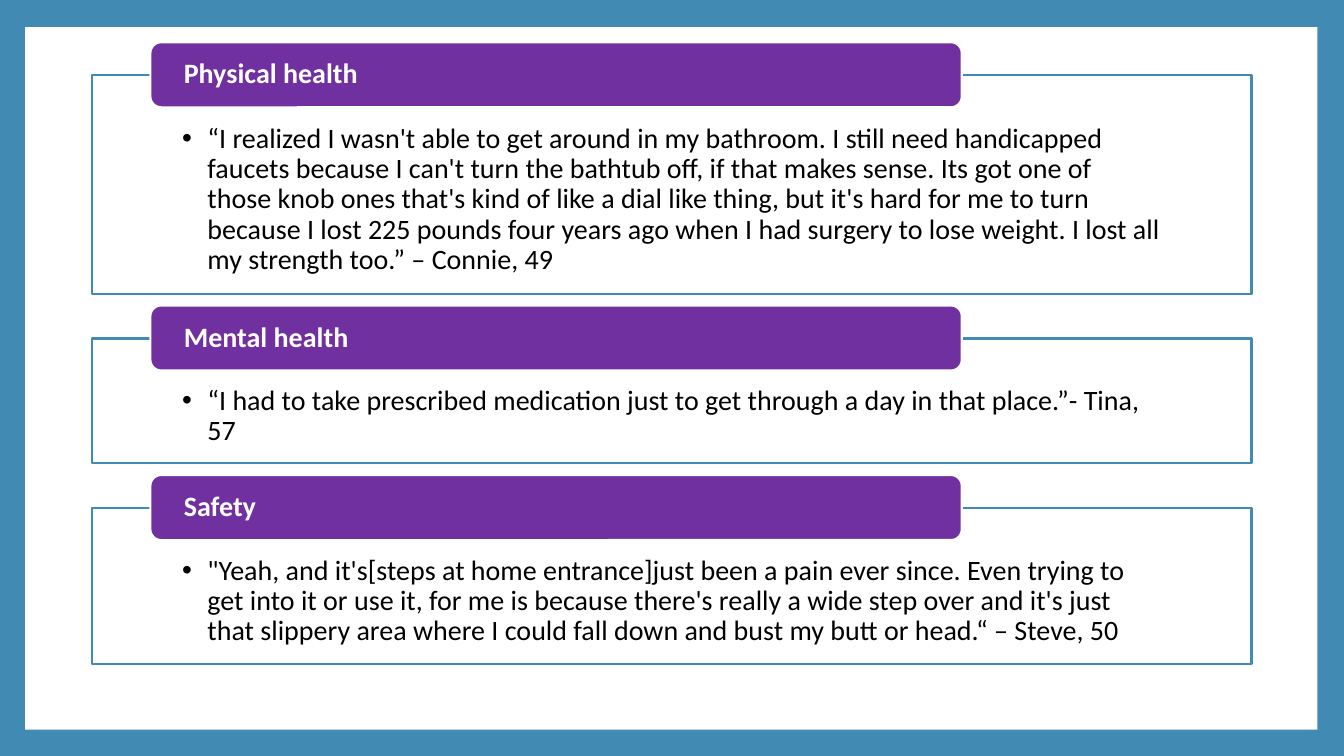
"""Build a slide of three quotes about home and health, each in a labelled frame."""
from dataclasses import dataclass

from lxml import etree
from pptx import Presentation
from pptx.dml.color import RGBColor
from pptx.enum.shapes import MSO_SHAPE
from pptx.enum.text import MSO_ANCHOR, PP_ALIGN
from pptx.oxml.ns import qn
from pptx.util import Pt


@dataclass(frozen=True)
class Theme:
    font: str = "Calibri"
    text_size: float = 20
    line_width: float = 1.5
    line_spacing: float = 0.9
    accent: RGBColor = RGBColor(0x41, 0x8A, 0xB3)
    label: RGBColor = RGBColor(0x70, 0x30, 0xA0)
    paper: RGBColor = RGBColor(0xFF, 0xFF, 0xFF)
    ink: RGBColor = RGBColor(0, 0, 0)


class QuoteSlide:
    def __init__(self, slide, theme):
        self.slide = slide
        self.theme = theme

    def background(self):
        fill = self.slide.background.fill
        fill.solid()
        fill.fore_color.rgb = self.theme.accent

    def panel(self, kind, box, fill, line=None):
        panel = self.slide.shapes.add_shape(kind, *map(Pt, box))
        panel.shadow.inherit = False
        panel.fill.solid()
        panel.fill.fore_color.rgb = fill
        if line is None:
            panel.line.fill.background()
        else:
            panel.line.color.rgb = line
            panel.line.width = Pt(self.theme.line_width)
        return panel

    def label(self, panel, words, color, insets, bold=False):
        frame = panel.text_frame
        frame.text = words
        frame.word_wrap = True
        frame.vertical_anchor = MSO_ANCHOR.MIDDLE
        frame.margin_left = frame.margin_right = Pt(insets[0])
        frame.margin_top, frame.margin_bottom = Pt(insets[1]), Pt(insets[2])
        paragraph = frame.paragraphs[0]
        paragraph.alignment = PP_ALIGN.LEFT
        paragraph.line_spacing = self.theme.line_spacing
        font = paragraph.runs[0].font
        font.name = self.theme.font
        font.size = Pt(self.theme.text_size)
        font.bold = bold
        font.color.rgb = color
        return paragraph

    def quote(self, words, box):
        frame = self.panel(MSO_SHAPE.RECTANGLE, box, self.theme.paper, self.theme.accent)
        fill_color = frame.element.spPr.find(qn("a:solidFill"))[0]
        etree.SubElement(fill_color, qn("a:alpha")).set("val", "90000")
        paragraph = self.label(frame, words, self.theme.ink, (64.2, 33, 11.2))
        paragraph.level = 1
        properties = paragraph._p.get_or_add_pPr()
        properties.set("marL", str(Pt(18)))
        properties.set("indent", str(-Pt(18)))
        etree.SubElement(properties, qn("a:buFont")).set("typeface", "Arial")
        etree.SubElement(properties, qn("a:buChar")).set("char", "•")

    def heading(self, words, box):
        tab = self.panel(MSO_SHAPE.ROUNDED_RECTANGLE, box, self.theme.label, self.theme.paper)
        self.label(tab, words, self.theme.paper, (21.6, 0, 0), bold=True)


QUOTES = [
    ("Physical health", 156.2,
     "“I realized I wasn't able to get around in my bathroom. I still need handicapped "
     "faucets because I can't turn the bathtub off, if that makes sense. Its got one of "
     "those knob ones that's kind of like a dial like thing, but it's hard for me to turn "
     "because I lost 225 pounds four years ago when I had surgery to lose weight. I lost "
     "all my strength too.” – Connie, 49"),
    ("Mental health", 89.3,
     "“I had to take prescribed medication just to get through a day in that place.”"
     "- Tina, 57"),
    ("Safety", 111.6,
     "\"Yeah, and it's[steps at home entrance]just been a pain ever since. Even trying to "
     "get into it or use it, for me is because there's really a wide step over and it's "
     "just that slippery area where I could fall down and bust my butt or head.“ "
     "– Steve, 50"),
]
FRAME_LEFT, FRAME_WIDTH, FIRST_TOP, FRAME_GAP = 66, 828, 53.8, 31.8
TAB_LEFT, TAB_WIDTH, TAB_HEIGHT, TAB_RISE = 107.4, 579.6, 46.5, 23.6


def main():
    deck = Presentation()
    deck.slide_width, deck.slide_height = Pt(960), Pt(540)
    page = QuoteSlide(deck.slides.add_slide(deck.slide_layouts[6]), Theme())
    page.background()
    page.panel(MSO_SHAPE.RECTANGLE, (18, 19.4, 923, 501.8), page.theme.paper)
    top = FIRST_TOP
    for topic, height, words in QUOTES:
        page.quote(words, (FRAME_LEFT, top, FRAME_WIDTH, height))
        page.heading(topic, (TAB_LEFT, top - TAB_RISE, TAB_WIDTH, TAB_HEIGHT))
        top += height + FRAME_GAP
    deck.save("out.pptx")


if __name__ == "__main__":
    main()
